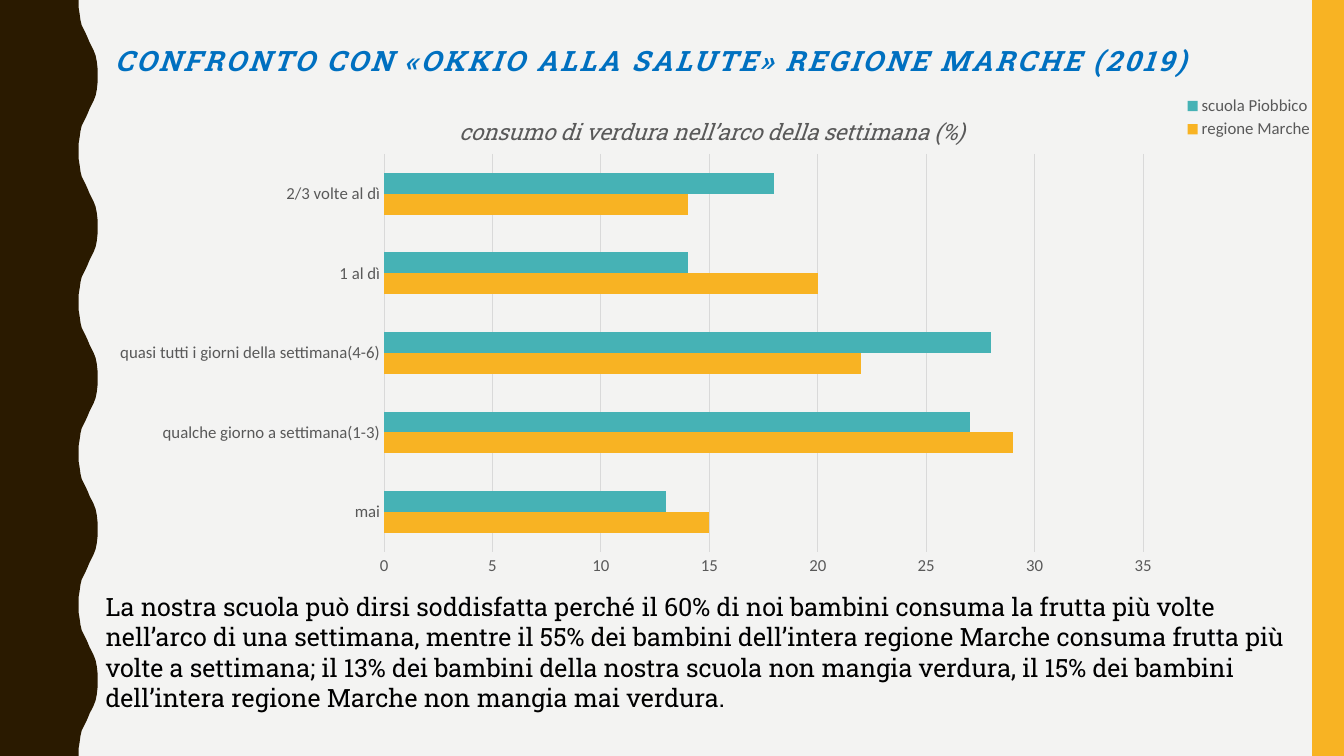
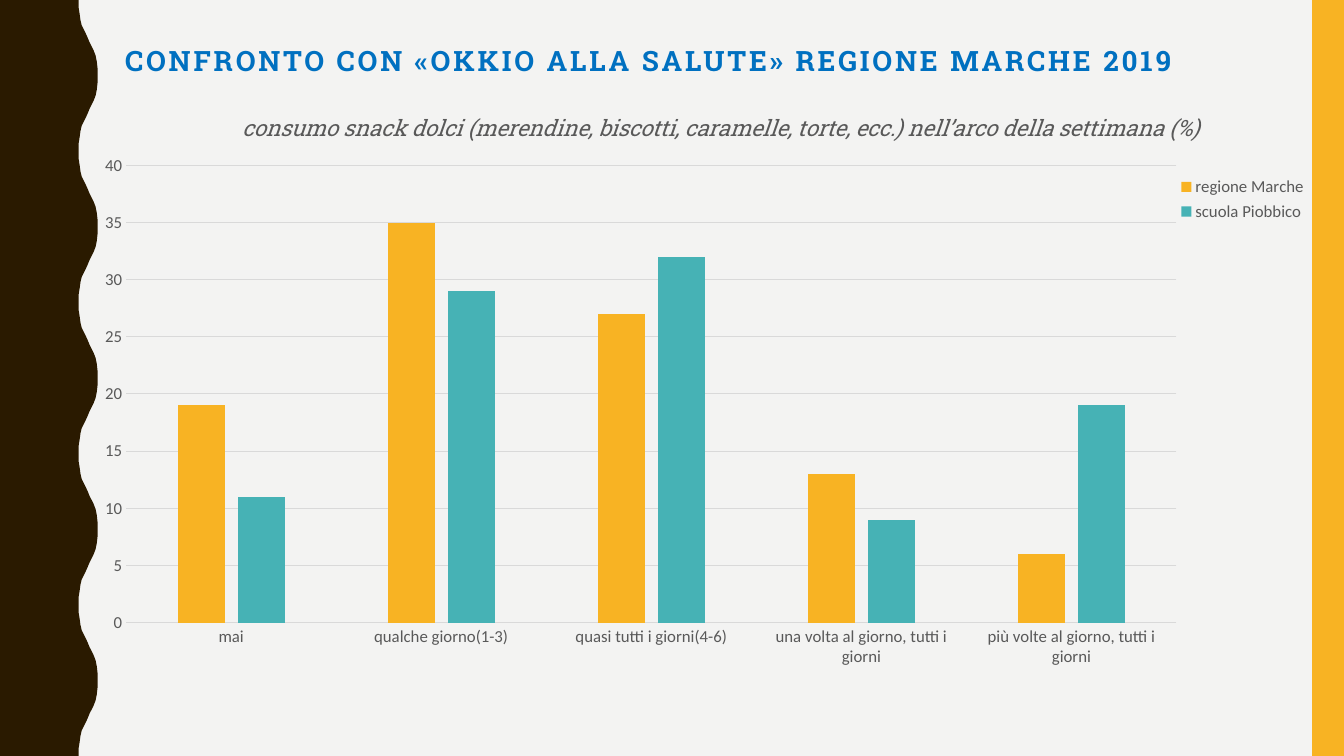
import lxml.etree
import pptx
import pptx.chart.data
import pptx.dml.color
import pptx.enum.chart
import pptx.enum.shapes
import pptx.enum.text
import pptx.oxml.ns
import pptx.util

Cm = pptx.util.Cm
Pt = pptx.util.Pt
RGBColor = pptx.dml.color.RGBColor
Kind = pptx.enum.chart.XL_CHART_TYPE
Side = pptx.enum.chart.XL_LEGEND_POSITION
Fit = pptx.enum.text.MSO_AUTO_SIZE

PAPER = RGBColor(0xF3, 0xF3, 0xF2)
BROWN = RGBColor(0x2A, 0x1A, 0x00)
GOLD = RGBColor(0xF8, 0xB3, 0x23)
TEAL = RGBColor(0x46, 0xB2, 0xB5)
BLUE = RGBColor(0x00, 0x70, 0xC0)
BLACK = RGBColor(0x00, 0x00, 0x00)
GRAY = RGBColor(0x59, 0x59, 0x59)
PALE = RGBColor(0xD9, 0xD9, 0xD9)

SLAB = "Roboto Slab"
SANS = "Calibri"
WIDTH, HEIGHT = 33.87, 19.05
PERIOD = 3.81
CURVE = [
    (1.98, 0), (1.98, 0.18), (2.01, 0.36), (2.03, 0.51), (2.06, 0.64),
    (2.11, 0.74), (2.16, 0.84), (2.21, 0.95), (2.26, 1.07), (2.31, 1.17),
    (2.36, 1.27), (2.41, 1.4), (2.44, 1.55), (2.46, 1.73), (2.46, 1.91),
]


def style(font, size, color, face=SANS, bold=False, italic=False):
    font.size = Pt(size)
    font.name = face
    font.color.rgb = color
    font.bold = bold
    font.italic = italic


def write(frame, text, align=None, space=None, **form):
    par = frame.paragraphs[0]
    par.alignment = align
    par.line_spacing = space
    run = par.add_run()
    run.text = text
    style(run.font, **form)


def arrange(node, box, place, **parts):
    left, top, width, height = box
    x, y, *size = place
    parts.update(xMode="edge", yMode="edge",
                 x=(x - left) / width, y=(y - top) / height)
    if size:
        parts.update(w=size[0] / width, h=size[1] / height)
    tag = pptx.oxml.ns.qn
    for old in node.xpath("c:layout"):
        node.remove(old)
    layout = lxml.etree.Element(tag("c:layout"))
    manual = lxml.etree.SubElement(layout, tag("c:manualLayout"))
    for name, val in parts.items():
        lxml.etree.SubElement(manual, tag("c:" + name)).set("val", str(val))
    prior = node.xpath("c:tx | c:legendPos")
    if prior:
        prior[0].addnext(layout)
    else:
        node.insert(0, layout)


class Deck:
    def __init__(self):
        self.prs = pptx.Presentation()
        self.prs.slide_width = Cm(WIDTH)
        self.prs.slide_height = Cm(HEIGHT)
        self.slide = None
        fill = self.prs.slide_master.background.fill
        fill.solid()
        fill.fore_color.rgb = PAPER

    def page(self):
        first = self.slide is None
        self.slide = self.prs.slides.add_slide(self.prs.slide_layouts[5])
        if first:
            self.share(self.wave(), BROWN, 101)
            self.share(self.band(), GOLD, 102)

    def share(self, shape, color, num):
        shape.shadow.inherit = False
        shape.fill.solid()
        shape.fill.fore_color.rgb = color
        shape.line.fill.background()
        shape.element.xpath("p:nvSpPr/p:cNvPr")[0].set("id", str(num))
        self.prs.slide_master.shapes.element.insert(2, shape.element)

    def wave(self):
        cycle = CURVE + [(x, PERIOD - y) for x, y in CURVE[-2::-1]]
        edge = [(x, y + PERIOD * turn) for turn in range(5) for x, y in cycle]
        points = [(Cm(x), Cm(y)) for x, y in edge + [(0, HEIGHT)]]
        outline = self.slide.shapes.build_freeform(0, 0)
        outline.add_line_segments(points, close=True)
        return outline.convert_to_shape()

    def band(self):
        rect = pptx.enum.shapes.MSO_SHAPE.RECTANGLE
        return self.slide.shapes.add_shape(
            rect, Cm(33.07), 0, Cm(0.8), Cm(HEIGHT))

    def title(self, text, box, italic=False):
        shape = self.slide.shapes.title
        shape.left, shape.top, shape.width, shape.height = map(Cm, box)
        frame = shape.text_frame
        frame.word_wrap = True
        frame.auto_size = Fit.NONE
        frame.vertical_anchor = pptx.enum.text.MSO_ANCHOR.TOP
        write(frame, text, align=pptx.enum.text.PP_ALIGN.LEFT, space=0.9,
              size=20, color=BLUE, face=SLAB, bold=True, italic=italic)
        shape.element.xpath(".//a:rPr")[0].set("spc", "200")

    def text(self, text, box):
        frame = self.slide.shapes.add_textbox(*map(Cm, box)).text_frame
        frame.word_wrap = True
        frame.auto_size = Fit.SHAPE_TO_FIT_TEXT
        write(frame, text, size=18, color=BLACK, face=SLAB)

    def chart(self, kind, box, head, cats, rows, top, gap, lap, side,
              name, plot, key):
        data = pptx.chart.data.CategoryChartData()
        data.categories = cats
        for label, vals in rows.items():
            data.add_series(label, vals)
        chart = self.slide.shapes.add_chart(kind, *map(Cm, box), data).chart
        style(chart.font, 12, GRAY)

        chart.has_title = True
        write(chart.chart_title.text_frame, head,
              size=16, color=GRAY, face=SLAB, italic=True)

        chart.has_legend = True
        chart.legend.position = side
        chart.legend.include_in_layout = False
        style(chart.legend.font, 12, GRAY)

        root = chart.element.xpath("c:chart")[0]
        arrange(root.xpath("c:title")[0], box, name)
        arrange(root.xpath("c:legend")[0], box, key)
        arrange(root.xpath("c:plotArea")[0], box, plot, layoutTarget="inner")

        bars = chart.plots[0]
        bars.vary_by_categories = False
        bars.gap_width = gap
        bars.overlap = lap
        for row, color in zip(bars.series, (GOLD, TEAL)):
            row.format.fill.solid()
            row.format.fill.fore_color.rgb = color

        self.axes(chart, top)

    def axes(self, chart, top):
        none = pptx.enum.chart.XL_TICK_MARK.NONE
        cat, val = chart.category_axis, chart.value_axis
        for axis in (cat, val):
            axis.major_tick_mark = none
            axis.minor_tick_mark = none
            style(axis.tick_labels.font, 12, GRAY)
        val.minimum_scale, val.maximum_scale, val.major_unit = 0, top, 5
        val.has_major_gridlines = True
        val.format.line.fill.background()
        for line in (cat.format.line, val.major_gridlines.format.line):
            line.color.rgb = PALE
            line.width = Pt(0.75)


def main():
    deck = Deck()

    deck.page()
    deck.title("CONFRONTO CON «OKKIO ALLA SALUTE» REGIONE MARCHE (2019)",
               (2.64, 1.07, 30.33, 1.19), italic=True)
    deck.chart(
        Kind.BAR_CLUSTERED, (2.41, 2.26, 30.81, 12.55),
        "consumo di verdura nell’arco della settimana (%)",
        ["mai", "qualche giorno a settimana(1-3)",
         "quasi tutti i giorni della settimana(4-6)",
         "1 al dì", "2/3 volte al dì"],
        {"regione Marche": (15, 29, 22, 20, 14),
         "scuola Piobbico": (13, 27, 28, 14, 18)},
        top=35, gap=182, lap=0, side=Side.CORNER, name=(11.47, 2.8),
        plot=(9.68, 3.88, 19.13, 10.03), key=(29.92, 2.34, 3.3, 1.25))
    deck.text(
        "La nostra scuola può dirsi soddisfatta perché il 60% di noi bambini "
        "consuma la frutta più volte nell’arco di una settimana, mentre il "
        "55% dei bambini dell’intera regione Marche consuma frutta più volte "
        "a settimana; il 13% dei bambini della nostra scuola non mangia "
        "verdura, il 15% dei bambini dell’intera regione Marche non mangia "
        "mai verdura.",
        (2.41, 14.78, 30.81, 3.33))

    deck.page()
    deck.title("CONFRONTO CON «OKKIO ALLA SALUTE» REGIONE MARCHE 2019",
               (2.9, 1.07, 29.82, 1.9))
    deck.chart(
        Kind.COLUMN_CLUSTERED, (2.26, 2.08, 31.62, 15.06),
        "consumo snack dolci (merendine, biscotti, caramelle, torte, ecc.) "
        "nell’arco della settimana (%)",
        ["mai", "qualche giorno(1-3)", "quasi tutti i giorni(4-6)",
         "una volta al giorno, tutti i giorni",
         "più volte al giorno, tutti i giorni"],
        {"regione Marche": (19, 35, 27, 13, 6),
         "scuola Piobbico": (11, 29, 32, 9, 19)},
        top=40, gap=219, lap=-27, side=Side.RIGHT, name=(6, 2.68),
        plot=(3.18, 4.17, 26.47, 11.52), key=(29.42, 4.34, 3.79, 1.36))

    deck.prs.save("out.pptx")


if __name__ == "__main__":
    main()
